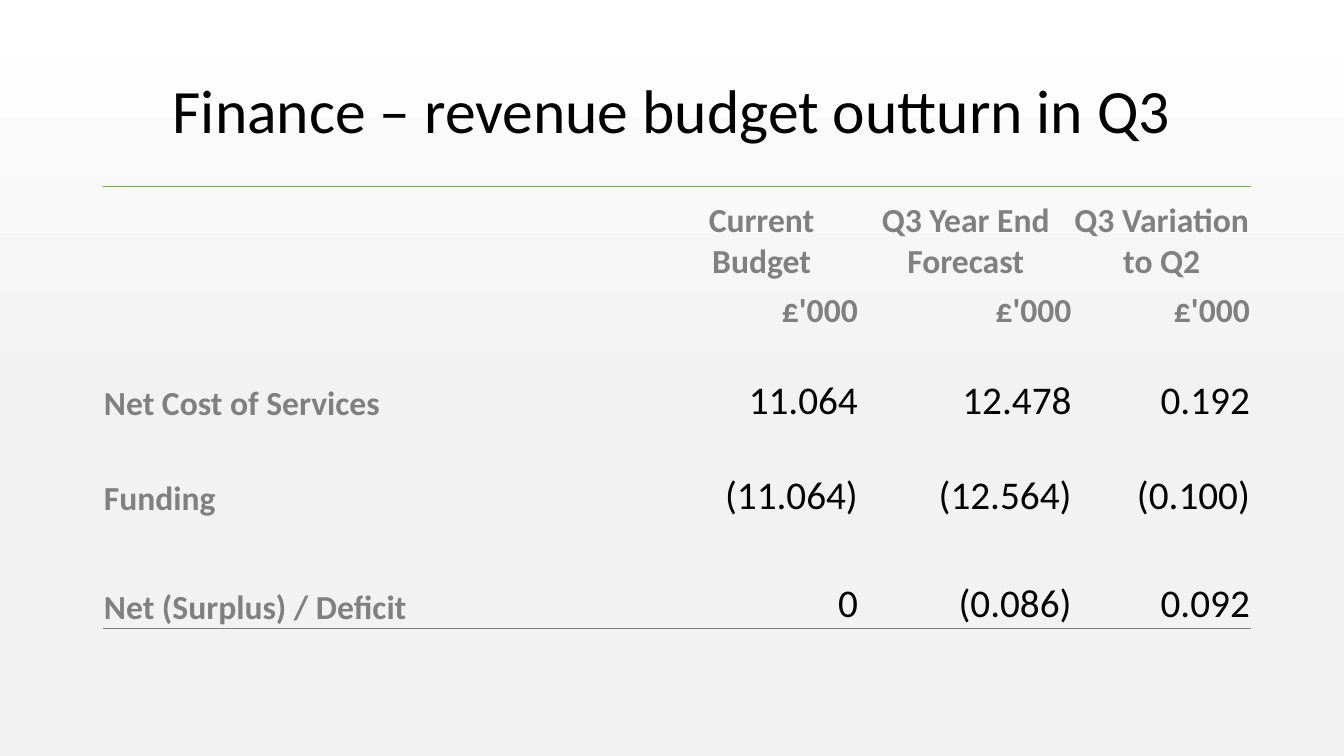
from lxml import etree
from pptx import Presentation
from pptx.dml.color import RGBColor
from pptx.enum import text as t
from pptx.oxml.ns import qn
from pptx.util import Pt

BLACK = RGBColor(0, 0, 0)
GREY = RGBColor(0x80, 0x80, 0x80)
GREEN = RGBColor(0x70, 0xAD, 0x47)
WHITE = RGBColor(0xFF, 0xFF, 0xFF)
PALE = RGBColor(0xF2, 0xF2, 0xF2)

PLAIN = "{2D5ABB26-0587-4C30-8999-92F81FD0307C}"
LEFT, MID, RIGHT = t.PP_ALIGN.LEFT, t.PP_ALIGN.CENTER, t.PP_ALIGN.RIGHT

COLS = [401, 139, 152.64, 127.44]
ROWS = [69.12, 34.56, 32, 35, 67.68, 42.48, 35]
BUDGET = [
    ["", "Current Budget", "Q3 Year End Forecast", "Q3 Variation to Q2"],
    ["", "£'000", "£'000", "£'000"],
    [""] * 4,
    ["Net Cost of Services", "11.064", "12.478", "0.192"],
    ["Funding", "(11.064)", "(12.564)", "(0.100)"],
    [""] * 4,
    ["Net (Surplus) / Deficit", "0", "(0.086)", "0.092"],
]


def write(frame, words, size=24, color=GREY, bold=False, align=LEFT, space=1.0):
    para = frame.paragraphs[0]
    para.alignment = align
    para.line_spacing = space
    run = para.add_run()
    run.text = words
    font = run.font
    font.name, font.size, font.bold = "Calibri", Pt(size), bold
    font.color.rgb = color


def shade(slide):
    fill = slide.background.fill
    fill.gradient()
    fill.gradient_angle = 270
    for stop, place, color in zip(fill.gradient_stops, (0, 0.54), (WHITE, PALE)):
        stop.position = place
        stop.color.rgb = color


def add_title(slide, words):
    box = slide.shapes.add_textbox(Pt(66), Pt(29), Pt(828), Pt(104.4))
    frame = box.text_frame
    frame.word_wrap = True
    frame.vertical_anchor = t.MSO_ANCHOR.MIDDLE
    write(frame, words, size=44, color=BLACK, align=MID, space=0.9)


def rule(cell, side, color):
    """Draw a 1 pt border on one side, "T" or "B", of a cell."""
    props = cell._tc.get_or_add_tcPr()
    line = etree.Element(qn("a:ln" + side), w=str(Pt(1)))
    fill = etree.SubElement(line, qn("a:solidFill"))
    etree.SubElement(fill, qn("a:srgbClr"), val=str(color))
    props.insert(0, line)


def fill_cell(cell, words, row, col):
    cell.fill.background()
    if words:
        cell.margin_left = cell.margin_right = cell.margin_top = Pt(0.75)
        cell.margin_bottom = 0
        cell.vertical_anchor = t.MSO_ANCHOR.BOTTOM
        value = row > 1 and col > 0
        align = LEFT if col == 0 else MID if row == 0 else RIGHT
        write(cell.text_frame, words, size=28 if value else 24,
              color=BLACK if value else GREY, bold=not value, align=align)
    if row == 0:
        rule(cell, "T", GREEN)
    elif row == len(ROWS) - 1:
        rule(cell, "B", GREY)


def add_budget(slide):
    frame = slide.shapes.add_table(len(ROWS), len(COLS), Pt(73.5), Pt(133),
                                   Pt(sum(COLS)), Pt(sum(ROWS)))
    table = frame.table
    table.first_row = table.horz_banding = False
    for style in frame.element.iter(qn("a:tableStyleId")):
        style.text = PLAIN
    for col, width in zip(table.columns, COLS):
        col.width = Pt(width)
    for row, height in zip(table.rows, ROWS):
        row.height = Pt(height)
    for i, line in enumerate(BUDGET):
        for j, words in enumerate(line):
            fill_cell(table.cell(i, j), words, i, j)


def main():
    deck = Presentation()
    deck.slide_width, deck.slide_height = Pt(960), Pt(540)
    slide = deck.slides.add_slide(deck.slide_layouts[6])
    shade(slide)
    add_title(slide, "Finance – revenue budget outturn in Q3")
    add_budget(slide)
    deck.save("out.pptx")


if __name__ == "__main__":
    main()
